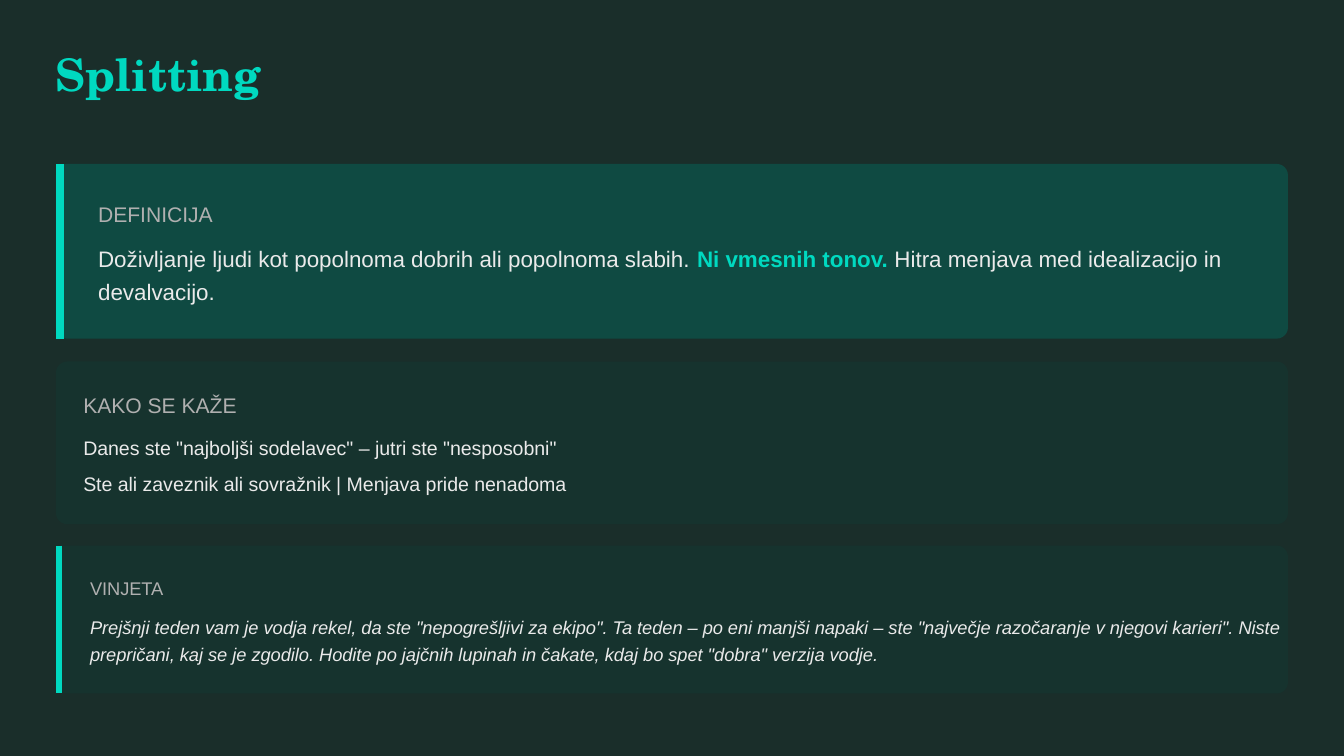
from lxml.etree import SubElement
from pptx import Presentation
from pptx.dml.color import RGBColor
from pptx.enum.shapes import MSO_CONNECTOR, MSO_SHAPE
from pptx.enum.text import MSO_ANCHOR, MSO_AUTO_SIZE, PP_ALIGN
from pptx.oxml.ns import qn
from pptx.util import Inches, Pt

COLORS = {
    "background": "1A2E2A",
    "accent": "00D9C0",
    "definition": "0F4A42",
    "panel": "16332E",
    "heading": "B0B0B0",
    "body": "EAEAEA",
}
TITLE = "Splitting"
CARDS = [
    {
        "top": 1.22, "height": 1.3, "fill": "definition", "bar": 4.5,
        "text_left": 0.73, "text_top": 1.47, "text_width": 8.78,
        "heading": "DEFINICIJA", "heading_size": 11.25, "heading_line": 15.75, "gap": 6,
        "body_height": 0.5, "body_size": 12, "body_line": 18, "italic": False,
        "body": [[
            ("Doživljanje ljudi kot popolnoma dobrih ali popolnoma slabih. ", False),
            ("Ni vmesnih tonov.", True),
            (" Hitra menjava med idealizacijo in devalvacijo.", False),
        ]],
    },
    {
        "top": 2.69, "height": 1.21, "fill": "panel", "bar": 0,
        "text_left": 0.62, "text_top": 2.89, "text_width": 8.93,
        "heading": "KAKO SE KAŽE", "heading_size": 11.25, "heading_line": 15.75, "gap": 7.5,
        "body_height": 0.46, "body_size": 10.5, "body_line": 14.7, "italic": False,
        "body": [
            [('Danes ste "najboljši sodelavec" – jutri ste "nesposobni"', False)],
            [("Ste ali zaveznik ali sovražnik | Menjava pride nenadoma", False)],
        ],
    },
    {
        "top": 4.06, "height": 1.1, "fill": "panel", "bar": 3,
        "text_left": 0.67, "text_top": 4.27, "text_width": 8.88,
        "heading": "VINJETA", "heading_size": 9.75, "heading_line": 13.65, "gap": 6,
        "body_height": 0.41, "body_size": 9.75, "body_line": 14.62, "italic": True,
        "body": [[(
            'Prejšnji teden vam je vodja rekel, da ste "nepogrešljivi za ekipo". '
            'Ta teden – po eni manjši napaki – ste "največje razočaranje v njegovi '
            'karieri". Niste prepričani, kaj se je zgodilo. Hodite po jajčnih lupinah '
            'in čakate, kdaj bo spet "dobra" verzija vodje.', False)]],
    },
]
SLIDE_WIDTH = Inches(10)
SLIDE_HEIGHT = SLIDE_WIDTH * 9 // 16
MARGIN = SLIDE_WIDTH // 24
CARD_WIDTH = SLIDE_WIDTH - 2 * MARGIN
CORNER = Pt(6)
LINE_GAP = Pt(4.5)


def color(name):
    return RGBColor.from_string(COLORS[name])


def prepare_frame(frame):
    frame.margin_left = frame.margin_top = frame.margin_right = frame.margin_bottom = 0
    frame.word_wrap = True
    frame.auto_size = MSO_AUTO_SIZE.NONE
    frame.vertical_anchor = MSO_ANCHOR.TOP


def style_paragraph(paragraph, size, line, color_name, face="Arial", bold=False, italic=False):
    paragraph.alignment = PP_ALIGN.LEFT
    paragraph.line_spacing = Pt(line)
    font = paragraph.font
    font.name, font.size, font.bold, font.italic = face, Pt(size), bold, italic
    font.color.rgb = color(color_name)


def add_text(slide, left, top, width, height, lines, size, line, color_name, italic=False):
    frame = slide.shapes.add_textbox(left, top, width, height).text_frame
    prepare_frame(frame)
    for index, pieces in enumerate(lines):
        paragraph = frame.add_paragraph() if index else frame.paragraphs[0]
        style_paragraph(paragraph, size, line, color_name, italic=italic)
        if index:
            paragraph.space_before = LINE_GAP
        for words, emphasis in pieces:
            run = paragraph.add_run()
            run.text = words
            if emphasis:
                run.font.bold = True
                run.font.color.rgb = color("accent")


def add_card(slide, card):
    top, height = Inches(card["top"]), Inches(card["height"])
    panel = slide.shapes.add_shape(MSO_SHAPE.ROUNDED_RECTANGLE, MARGIN, top, CARD_WIDTH, height)
    panel.adjustments[0] = CORNER / height
    panel.shadow.inherit = False
    panel.fill.solid()
    panel.fill.fore_color.rgb = color(card["fill"])
    panel.line.fill.background()

    if card["bar"]:
        center = MARGIN + Pt(card["bar"] / 2)
        bar = slide.shapes.add_connector(MSO_CONNECTOR.STRAIGHT, center, top, center, top + height)
        bar.line.width = Pt(card["bar"])
        bar.line.color.rgb = color("accent")
        SubElement(bar._element.spPr, qn("a:effectLst"))

    left, text_top = Inches(card["text_left"]), Inches(card["text_top"])
    width, heading_height = Inches(card["text_width"]), Pt(card["heading_line"])
    add_text(slide, left, text_top, width, heading_height, [[(card["heading"], False)]],
             card["heading_size"], card["heading_line"], "heading")
    add_text(slide, left, text_top + heading_height + Pt(card["gap"]), width,
             Inches(card["body_height"]), card["body"],
             card["body_size"], card["body_line"], "body", card["italic"])


def main():
    """Build the slide on splitting and save it."""
    deck = Presentation()
    deck.slide_width, deck.slide_height = SLIDE_WIDTH, SLIDE_HEIGHT
    slide = deck.slides.add_slide(deck.slide_layouts[5])
    slide.background.fill.solid()
    slide.background.fill.fore_color.rgb = color("background")

    title = slide.shapes.title
    title.left, title.top = MARGIN, MARGIN
    title.width, title.height = Inches(4.69), Inches(0.33)
    title.text = TITLE
    prepare_frame(title.text_frame)
    style_paragraph(title.text_frame.paragraphs[0], 24, 24, "accent", "TeX Gyre Schola", bold=True)

    for card in CARDS:
        add_card(slide, card)
    deck.save("out.pptx")


if __name__ == "__main__":
    main()
